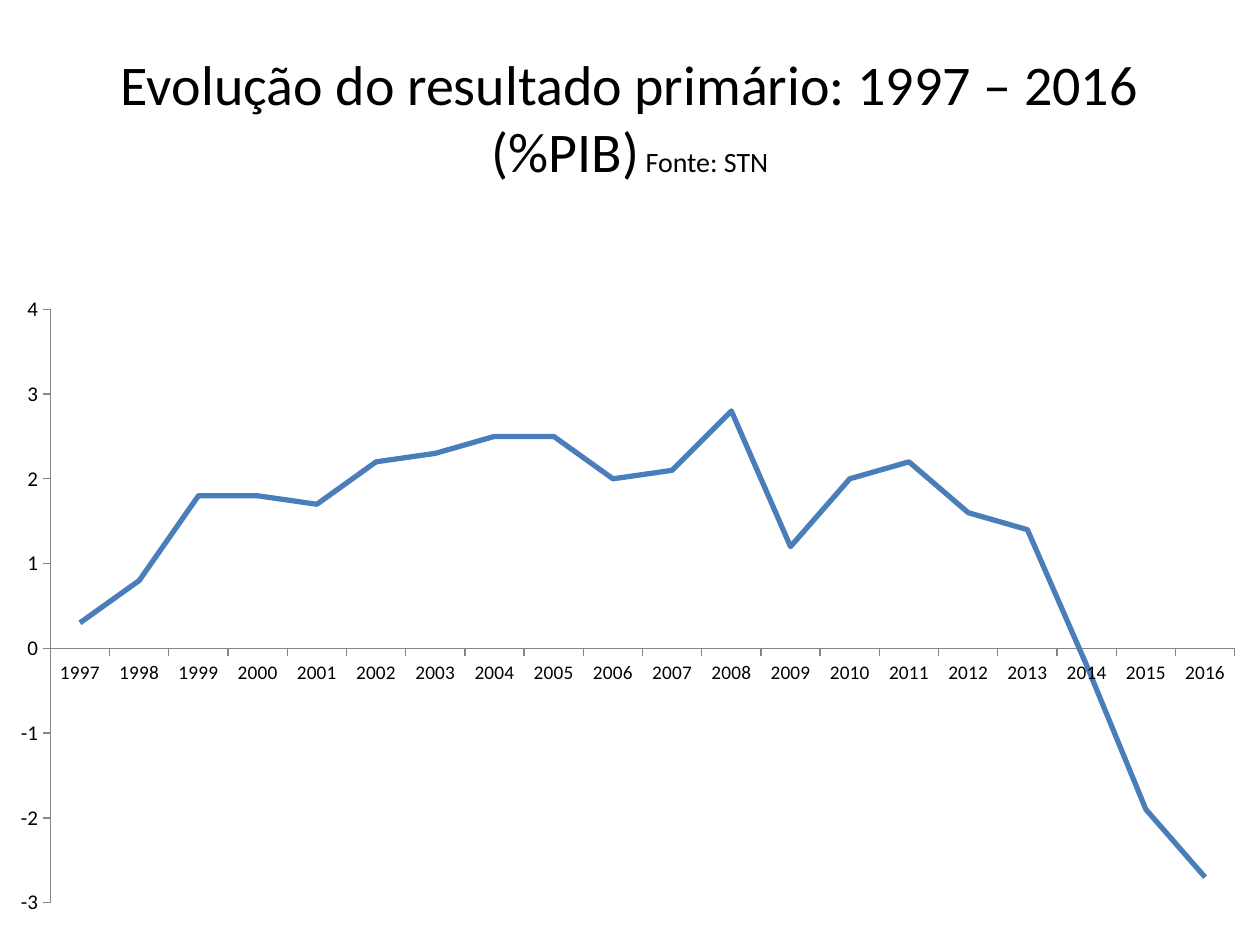
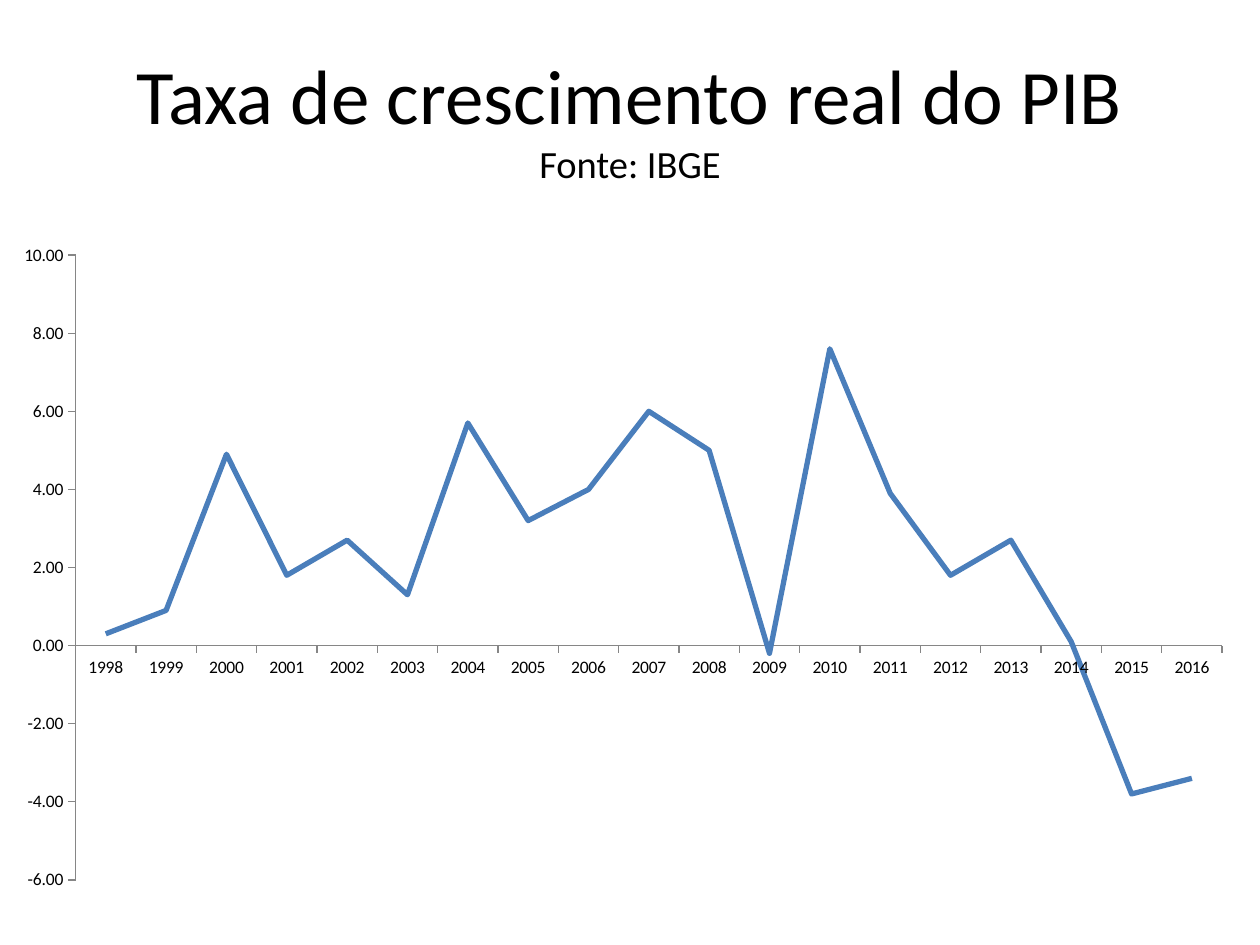
from lxml import etree
from pptx import Presentation
from pptx.chart.data import CategoryChartData
from pptx.dml.color import RGBColor
from pptx.enum.chart import XL_CHART_TYPE, XL_TICK_LABEL_POSITION, XL_TICK_MARK
from pptx.enum.text import MSO_ANCHOR, PP_ALIGN
from pptx.oxml.ns import qn
from pptx.util import Inches, Pt

LINE = XL_CHART_TYPE.LINE
NEXT = XL_TICK_LABEL_POSITION.NEXT_TO_AXIS
OUT, NONE = XL_TICK_MARK.OUTSIDE, XL_TICK_MARK.NONE
MIDDLE, CENTER = MSO_ANCHOR.MIDDLE, PP_ALIGN.CENTER

# Shared style
FONT = "Calibri"
BLACK, BLUE, GRAY = "000000", "4A7EBB", "868686"
LAST = 2016

# Yearly values, each list ending in LAST
RESULT = [0.3, 0.8, 1.8, 1.8, 1.7, 2.2, 2.3, 2.5, 2.5, 2, 2.1, 2.8, 1.2,
          2, 2.2, 1.6, 1.4, -0.2, -1.9, -2.7]
GROWTH = [0.3, 0.9, 4.9, 1.8, 2.7, 1.3, 5.7, 3.2, 4, 6, 5, -0.2, 7.6,
          3.9, 1.8, 2.7, 0.1, -3.8, -3.4]


def color(code):
    return RGBColor.from_string(code)


def style(font, size):
    font.name = FONT
    font.size = Pt(size)
    font.color.rgb = color(BLACK)


def add_run(para, text, size):
    run = para.add_run()
    run.text = text
    style(run.font, size)


def add_title(slide, text, source, size, split=False):
    """Title with its source at half size, on a new line if split."""
    box = slide.shapes.add_textbox(Inches(0.5), Inches(0.3),
                                   Inches(9), Inches(1.25))
    frame = box.text_frame
    frame.word_wrap = True
    frame.vertical_anchor = MIDDLE
    para = frame.paragraphs[0]
    para.alignment = CENTER
    add_run(para, text, size)
    if split:
        para.add_line_break()
    add_run(para, source if split else " " + source, size / 2)


def set_axis(axis, size):
    axis.has_major_gridlines = False
    axis.major_tick_mark = OUT
    axis.minor_tick_mark = NONE
    axis.tick_label_position = NEXT
    axis.format.line.color.rgb = color(GRAY)
    axis.format.line.width = Pt(0.75)
    style(axis.tick_labels.font, size)


def set_plot(chart, area):
    """Fix the inner plot area as fractions of the chart: x, y, w, h."""
    plot = chart._chartSpace.chart.plotArea
    for old in plot.findall(qn("c:layout")):
        plot.remove(old)
    layout = etree.Element(qn("c:layout"))
    manual = etree.SubElement(layout, qn("c:manualLayout"))
    parts = [("layoutTarget", "inner"), ("xMode", "edge"), ("yMode", "edge")]
    for name, val in parts + list(zip("xywh", area)):
        etree.SubElement(manual, qn("c:" + name)).set("val", str(val))
    plot.insert(0, layout)


def add_line(slide, vals, top, height, area, scale, sizes, form):
    data = CategoryChartData()
    data.categories = [str(y) for y in range(LAST - len(vals) + 1, LAST + 1)]
    data.add_series("Series 1", vals)
    chart = slide.shapes.add_chart(LINE, 0, Inches(top), Inches(10),
                                   Inches(height), data).chart
    chart.has_legend = False
    chart.has_title = False
    style(chart.font, 10)
    chart.plots[0].vary_by_categories = False
    set_plot(chart, area)

    # Axes
    set_axis(chart.category_axis, sizes[0])
    axis = chart.value_axis
    set_axis(axis, sizes[1])
    axis.minimum_scale, axis.maximum_scale, axis.major_unit = scale
    axis.tick_labels.number_format = form
    axis.tick_labels.number_format_is_linked = False

    # Series
    series = chart.plots[0].series[0]
    series.smooth = False
    series.format.line.color.rgb = color(BLUE)
    series.format.line.width = Pt(3)
    mark = series._element.get_or_add_marker()
    mark.get_or_add_symbol().set("val", "none")


def main():
    deck = Presentation()
    deck.slide_width, deck.slide_height = Inches(10), Inches(7.5)
    blank = deck.slide_layouts[6]

    # Primary result
    slide = deck.slides.add_slide(blank)
    add_title(slide, "Evolução do resultado primário: 1997 – 2016 (%PIB)",
              "Fonte: STN", 32)
    add_line(slide, RESULT, 2.25, 5.12, (0.04, 0.04, 0.94, 0.92),
             (-3, 4, 1), (11, 12), "General")

    # Real growth
    slide = deck.slides.add_slide(blank)
    add_title(slide, "Taxa de crescimento real do PIB", "Fonte: IBGE", 44,
              split=True)
    add_line(slide, GROWTH, 1.86, 5.51, (0.06, 0.03, 0.91, 0.9),
             (-6, 10, 2), (10, 10), "0.00")

    deck.save("out.pptx")


if __name__ == "__main__":
    main()
